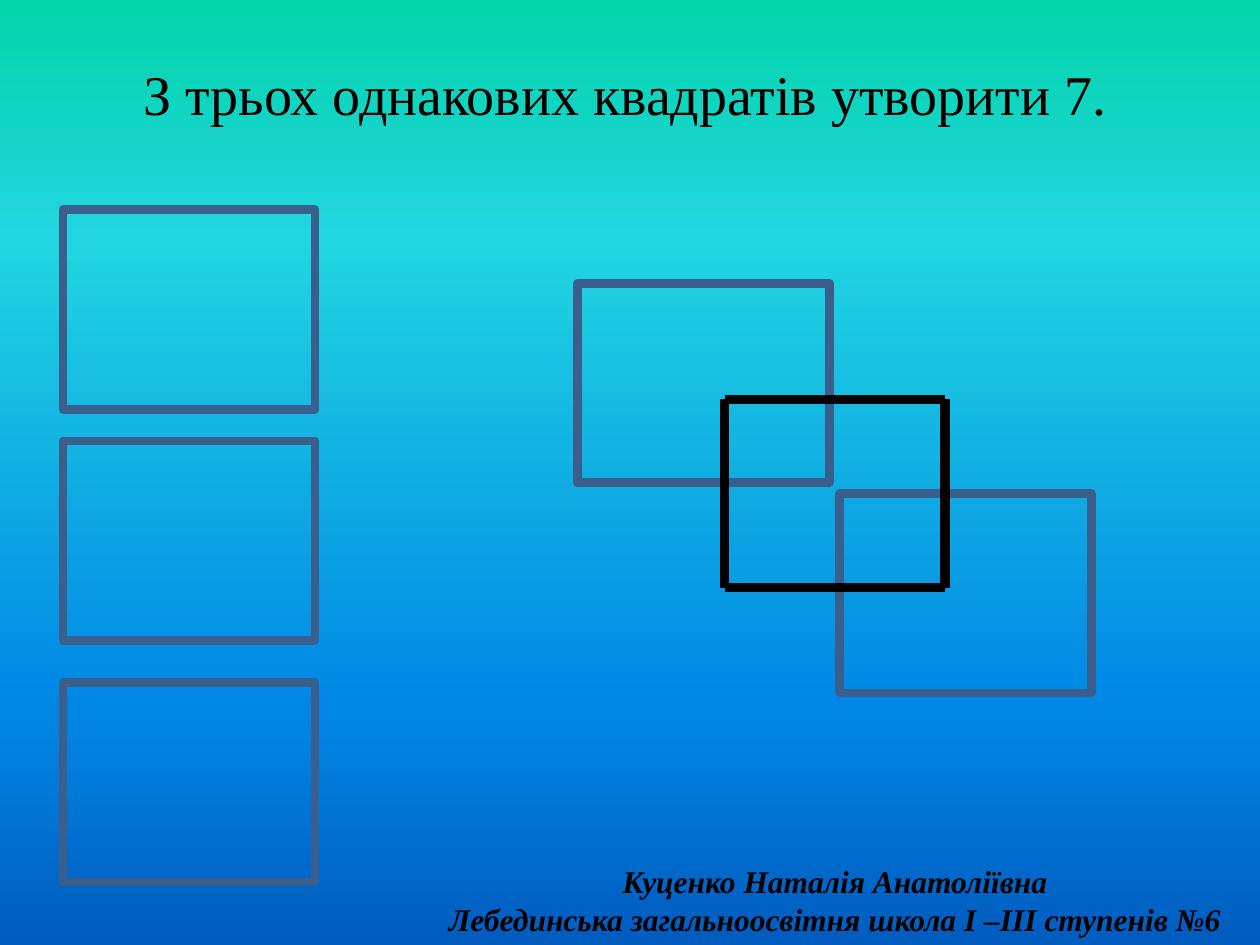
"""Build the slide with the puzzle of making seven squares from three."""
import pptx
import pptx.dml.color
import pptx.enum.shapes
import pptx.enum.text
import pptx.oxml.ns
import pptx.util
from lxml import etree

Cm = pptx.util.Cm
Pt = pptx.util.Pt
RGBColor = pptx.dml.color.RGBColor
qn = pptx.oxml.ns.qn

TITLE = "З трьох однакових квадратів утворити 7."
AUTHOR_LINES = [
    "Куценко Наталія Анатоліївна",
    "Лебединська загальноосвітня школа І –ІІІ ступенів №6",
]
FONT = "Times New Roman"
BLACK = RGBColor(0x00, 0x00, 0x00)
OUTLINE = RGBColor(0x3A, 0x5F, 0x8C)
GRADIENT = [
    (0, RGBColor(0x03, 0xD4, 0xA8)),
    (25, RGBColor(0x21, 0xD6, 0xE0)),
    (75, RGBColor(0x00, 0x87, 0xE6)),
    (100, RGBColor(0x00, 0x5C, 0xBF)),
]

SQUARE_WIDTH, SQUARE_HEIGHT = 5.08, 4.02
GIVEN_SQUARES = [(1.27, 13.76), (1.27, 8.89), (1.27, 4.23)]
ANSWER_SQUARES = [(11.64, 5.71), (16.93, 9.95)]
LEFT, TOP, RIGHT, BOTTOM = 14.61, 8.05, 19.05, 11.85
MIDDLE_SQUARE_SIDES = [
    (LEFT, TOP, RIGHT, TOP),
    (LEFT, BOTTOM, RIGHT, BOTTOM),
    (LEFT, TOP, LEFT, BOTTOM),
    (RIGHT, TOP, RIGHT, BOTTOM),
]


def paint_background(slide):
    fill = slide.background.fill
    fill.gradient()
    fill.gradient_angle = 270
    stops = next(slide._element.iter(qn("a:gsLst")))
    for stop in list(stops):
        stops.remove(stop)
    for percent, color in GRADIENT:
        stop = etree.SubElement(stops, qn("a:gs"), pos=str(percent * 1000))
        etree.SubElement(stop, qn("a:srgbClr"), val=str(color))


def add_square(slide, left, top):
    square = slide.shapes.add_shape(
        pptx.enum.shapes.MSO_SHAPE.RECTANGLE,
        Cm(left), Cm(top), Cm(SQUARE_WIDTH), Cm(SQUARE_HEIGHT))
    square._element.set("useBgFill", "1")
    square.shadow.inherit = False
    square.line.color.rgb = OUTLINE
    square.line.width = Pt(5)


def add_side(slide, ends):
    side = slide.shapes.add_connector(
        pptx.enum.shapes.MSO_CONNECTOR.STRAIGHT, *map(Cm, ends))
    side.line.color.rgb = BLACK
    side.line.width = Pt(5.25)
    etree.SubElement(side._element.spPr, qn("a:effectLst"))


def add_text(slide, box, lines, size, wrap, anchor, alignment, emphasis):
    text_frame = slide.shapes.add_textbox(*map(Cm, box)).text_frame
    text_frame.word_wrap = wrap
    text_frame.vertical_anchor = anchor
    text_frame.text = "\n".join(lines)
    for paragraph in text_frame.paragraphs:
        paragraph.alignment = alignment
        for run in paragraph.runs:
            run.font.name = FONT
            run.font.size = Pt(size)
            run.font.bold = run.font.italic = emphasis
            run.font.color.rgb = BLACK


def main():
    presentation = pptx.Presentation()
    presentation.slide_width = Cm(25.4)
    presentation.slide_height = Cm(19.05)
    slide = presentation.slides.add_slide(presentation.slide_layouts[6])
    anchors = pptx.enum.text.MSO_ANCHOR
    alignments = pptx.enum.text.PP_ALIGN
    paint_background(slide)
    add_text(slide, (2.64, 1.07, 20.14, 1.63), [TITLE], 32,
             False, anchors.MIDDLE, alignments.LEFT, False)
    for left, top in GIVEN_SQUARES + ANSWER_SQUARES:
        add_square(slide, left, top)
    for ends in MIDDLE_SQUARE_SIDES:
        add_side(slide, ends)
    add_text(slide, (8.26, 17.25, 17.14, 1.8), AUTHOR_LINES, 18,
             True, anchors.TOP, alignments.CENTER, True)
    presentation.save("out.pptx")


if __name__ == "__main__":
    main()
